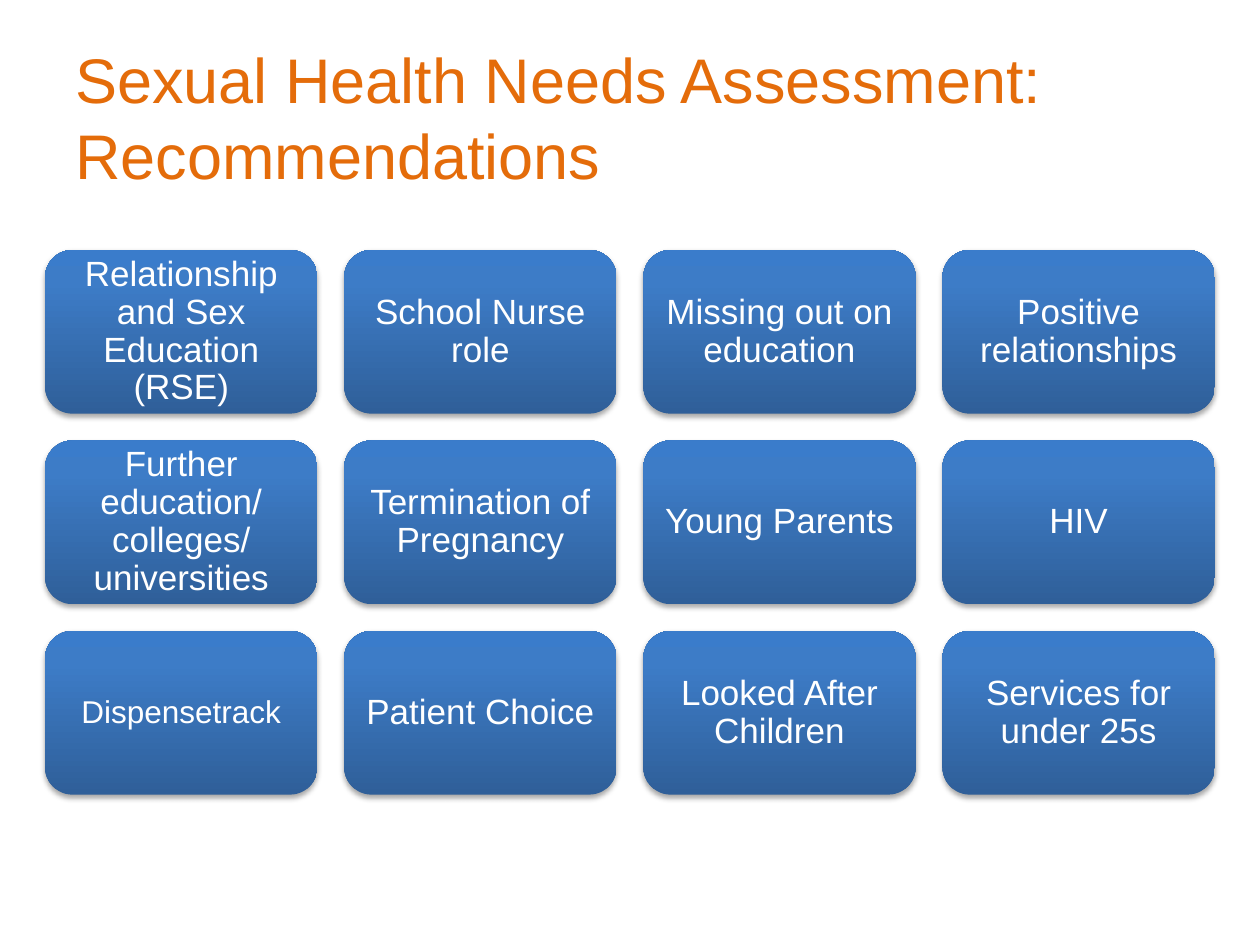
from lxml.etree import SubElement
from pptx import Presentation
from pptx.dml.color import RGBColor
from pptx.enum.shapes import MSO_SHAPE
from pptx.enum.text import MSO_ANCHOR, PP_ALIGN
from pptx.oxml.ns import qn
from pptx.util import Cm, Pt

COLOURS = {
    "title": "E46C0A",
    "label": "FFFFFF",
    "card_bottom": "2F5F99",
    "card_middle": "3D7CC7",
    "card_top": "3A7CCB",
    "shadow": "000000",
}
CARD_STOPS = [(0, "card_bottom"), (80, "card_middle"), (100, "card_top")]
RECOMMENDATIONS = [
    ["Relationship and Sex Education (RSE)", "School Nurse role",
     "Missing out on education", "Positive relationships"],
    ["Further education/ colleges/ universities", "Termination of Pregnancy",
     "Young Parents", "HIV"],
    ["Dispensetrack", "Patient Choice",
     "Looked After Children", "Services for under 25s"],
]
LABEL_SIZES = {"Dispensetrack": 18}


def write_text(frame, text, *, size, colour, align=PP_ALIGN.LEFT, spacing=1.0, inset=0.25):
    """Write one vertically centred paragraph into a text frame."""
    frame.word_wrap = True
    frame.vertical_anchor = MSO_ANCHOR.MIDDLE
    frame.margin_left = frame.margin_right = Cm(inset)
    frame.margin_top = frame.margin_bottom = Cm(min(inset, 0.2))
    paragraph = frame.paragraphs[0]
    paragraph.alignment = align
    paragraph.line_spacing = spacing
    run = paragraph.add_run()
    run.text = text
    run.font.name = "Arial"
    run.font.size = Pt(size)
    run.font.color.rgb = RGBColor.from_string(COLOURS[colour])


def shade_card(card):
    """Give a card its vertical gradient and soft shadow below."""
    card.fill.gradient()
    card.fill.gradient_angle = 90
    properties = card.element.spPr
    stops = properties.find(".//" + qn("a:gsLst"))
    stops.clear()
    for percent, colour in CARD_STOPS:
        stop = SubElement(stops, qn("a:gs"), pos=str(percent * 1000))
        SubElement(stop, qn("a:srgbClr"), val=COLOURS[colour])
    card.line.fill.background()
    card.shadow.inherit = False
    shadow = SubElement(properties.find(qn("a:effectLst")), qn("a:outerShdw"),
                        blurRad=str(Pt(3.1)), dist=str(Pt(1.8)),
                        dir="5400000", rotWithShape="0")
    tint = SubElement(shadow, qn("a:srgbClr"), val=COLOURS["shadow"])
    SubElement(tint, qn("a:alpha"), val="35000")


def add_title(slide, left, top, width, height):
    """Place the slide title in the given box."""
    title = slide.shapes.add_textbox(Cm(left), Cm(top), Cm(width), Cm(height))
    write_text(title.text_frame, "Sexual Health Needs Assessment: Recommendations",
               size=36, colour="title")


def add_recommendations(slide, left, top, width, height, gap=0.54):
    """Place the grid of recommendation cards in the given box."""
    rows, columns = len(RECOMMENDATIONS), len(RECOMMENDATIONS[0])
    card_width = (width - gap * (columns - 1)) / columns
    card_height = (height - gap * (rows - 1)) / rows
    for row, labels in enumerate(RECOMMENDATIONS):
        for column, label in enumerate(labels):
            card = slide.shapes.add_shape(
                MSO_SHAPE.ROUNDED_RECTANGLE,
                Cm(left + column * (card_width + gap)),
                Cm(top + row * (card_height + gap)),
                Cm(card_width), Cm(card_height))
            shade_card(card)
            write_text(card.text_frame, label, size=LABEL_SIZES.get(label, 20),
                       colour="label", align=PP_ALIGN.CENTER, spacing=0.9, inset=0.2)


def main():
    """Build the recommendations slide and save it."""
    presentation = Presentation()
    presentation.slide_width = Cm(25.4)
    presentation.slide_height = Cm(19.05)
    slide = presentation.slides.add_slide(presentation.slide_layouts[6])
    add_title(slide, 1.27, 0.76, 22.86, 3.18)
    add_recommendations(slide, 0.91, 5.04, 23.58, 10.98)
    presentation.save("out.pptx")


if __name__ == "__main__":
    main()
